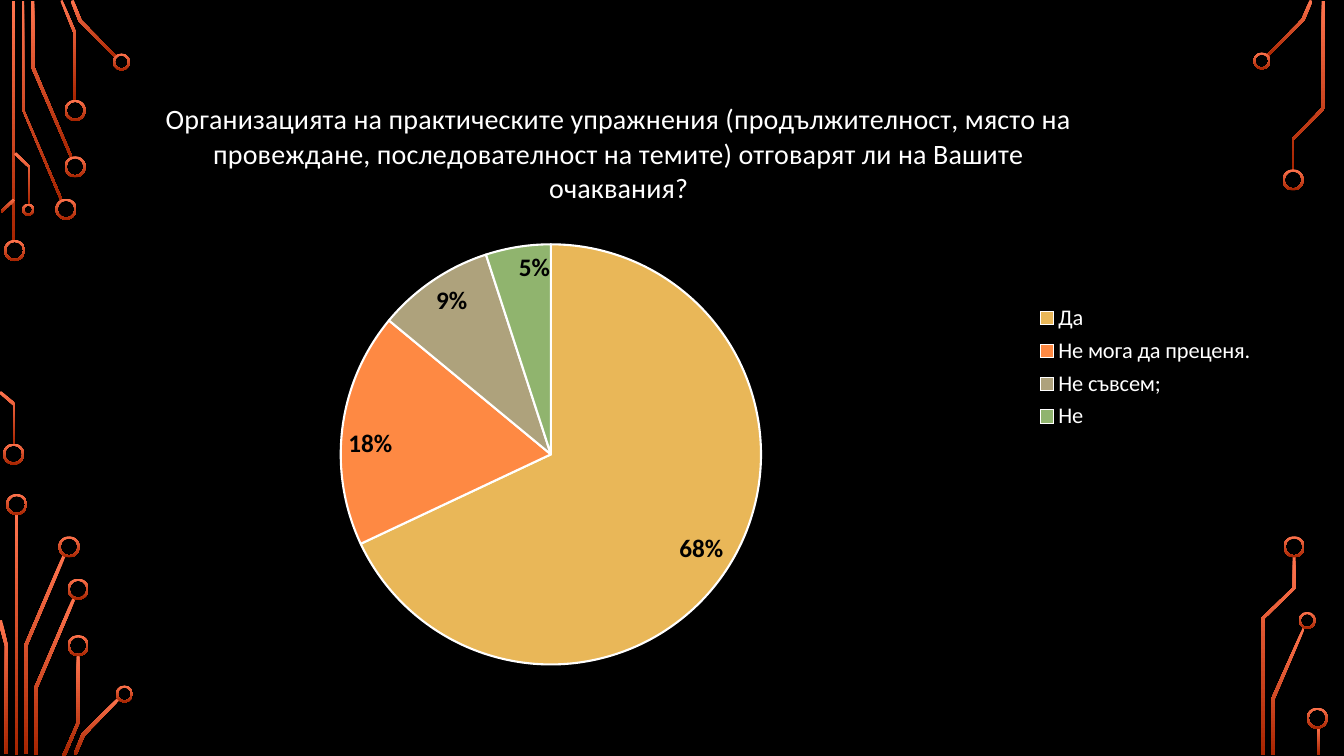
from pptx import Presentation
from pptx.chart.data import CategoryChartData
from pptx.dml.color import RGBColor
from pptx.enum.chart import XL_CHART_TYPE, XL_LABEL_POSITION, XL_LEGEND_POSITION
from pptx.enum.shapes import MSO_SHAPE
from pptx.oxml import parse_xml
from pptx.oxml.ns import nsdecls, qn
from pptx.util import Inches, Pt

BLACK = RGBColor(0x00, 0x00, 0x00)
WHITE = RGBColor(0xFF, 0xFF, 0xFF)
TRACE_TOP = RGBColor(0xFF, 0x74, 0x4E)
TRACE_BOTTOM = RGBColor(0xA6, 0x24, 0x00)
FONT = "Calibri"
RING_WIDTH = 0.02

ANSWERS = [
    ("Да", 68, RGBColor(0xE9, 0xB7, 0x58)),
    ("Не мога да преценя.", 18, RGBColor(0xFE, 0x89, 0x43)),
    ("Не съвсем;", 9, RGBColor(0xAE, 0xA2, 0x7C)),
    ("Не", 5, RGBColor(0x90, 0xB4, 0x6E)),
]
QUESTION = (
    "Организацията на практическите упражнения (продължителност, място на "
    "провеждане, последователност на темите) отговарят ли на Вашите очаквания?"
)

# Straight traces: left, top, height
BARS = [(0.12, 0.01, 2.39), (0.15, 5.1, 2.39), (13.06, 7.21, 0.28)]

# Bent traces: outline corners
TRACES = [
    # top left
    [(0.6, 1.99), (0.22, 1.09), (0.22, 0.01), (0.24, 0.01), (0.24, 1.09), (0.62, 1.98)],
    [(0.7, 1.57), (0.31, 0.67), (0.31, 0.01), (0.34, 0.01), (0.34, 0.66), (0.72, 1.56)],
    [(0.76, 1), (0.73, 1), (0.73, 0.33), (0.6, 0.01), (0.62, 0), (0.76, 0.33)],
    [(1.15, 0.58), (0.78, 0.21), (0.7, 0.01), (0.73, 0), (0.81, 0.2), (1.16, 0.56)],
    [(0.02, 2.11), (0.01, 2.09), (0.13, 1.97), (0.15, 1.99)],
    [(0.3, 2.03), (0.28, 2.03), (0.28, 1.66), (0.14, 1.53), (0.16, 1.51), (0.3, 1.65)],
    # bottom left
    [(0.15, 4.41), (0.13, 4.41), (0.13, 4.02), (-0.01, 3.9), (0.01, 3.88), (0.15, 4)],
    [(0.27, 7.48), (0.24, 7.48), (0.24, 6.4), (0.62, 5.51), (0.65, 5.52), (0.27, 6.41)],
    [(0.08, 7.48), (0.05, 7.48), (0.05, 6.41), (-0.02, 6.16), (0.02, 6.15), (0.08, 6.41)],
    [(0.37, 7.49), (0.34, 7.49), (0.34, 6.82), (0.72, 5.93), (0.75, 5.94), (0.37, 6.83)],
    [(0.65, 7.5), (0.62, 7.49), (0.76, 7.17), (0.76, 6.5), (0.79, 6.5), (0.79, 7.17)],
    [(0.76, 7.49), (0.73, 7.48), (0.81, 7.28), (1.17, 6.92), (1.19, 6.94), (0.84, 7.3)],
    # top right
    [(12.58, 0.56), (12.56, 0.55), (12.91, 0.19), (12.99, 0), (13.02, 0.01), (12.94, 0.2)],
    [(12.83, 1.69), (12.81, 1.69), (12.81, 1.38), (13.11, 1.07), (13.11, 0.01),
     (13.14, 0.01), (13.14, 1.08), (12.83, 1.39)],
    # bottom right
    [(12.64, 7.49), (12.61, 7.49), (12.61, 6.93), (12.92, 6.23), (12.94, 6.24), (12.64, 6.94)],
    [(12.54, 7.49), (12.51, 7.49), (12.51, 6.13), (12.82, 5.83), (12.82, 5.52),
     (12.85, 5.52), (12.85, 5.84), (12.54, 6.14)],
]

# Trace ends by diameter: left, top
RINGS = {
    0.21: [(0.04, 2.38), (0.03, 4.4), (0.55, 1.97), (0.64, 1.55), (0.64, 0.99),
           (0.06, 4.9), (0.58, 5.32), (0.67, 5.74), (0.67, 6.3),
           (12.72, 1.68), (12.73, 5.32), (12.96, 7.02)],
    0.17: [(1.12, 0.53), (1.15, 6.8), (12.43, 0.52), (12.88, 6.07)],
    0.12: [(0.22, 2.02)],
}


def style_trace(sp):
    sp.shadow.inherit = False
    sp.line.fill.background()
    sp.fill.gradient()
    sp.fill.gradient_angle = 270
    for stop, color in zip(sp.fill.gradient_stops, (TRACE_TOP, TRACE_BOTTOM)):
        stop.color.rgb = color


def place_in_chart(parent, index, **fractions):
    """Give a chart part a manual layout in fractions of the chart; index is its place in the XML."""
    old = parent.find(qn("c:layout"))
    if old is not None:
        parent.remove(old)
    target = '<c:layoutTarget val="inner"/>' if parent.tag == qn("c:plotArea") else ""
    modes = '<c:xMode val="edge"/><c:yMode val="edge"/>'
    values = "".join(f'<c:{key} val="{val}"/>' for key, val in fractions.items())
    parent.insert(index, parse_xml(
        f'<c:layout {nsdecls("c")}><c:manualLayout>{target}{modes}{values}'
        "</c:manualLayout></c:layout>"))


prs = Presentation()
prs.slide_width = Inches(13.33)
prs.slide_height = Inches(7.5)
s = prs.slides.add_slide(prs.slide_layouts[6])
s.background.fill.solid()
s.background.fill.fore_color.rgb = BLACK

# Circuit decoration
for left, top, height in BARS:
    style_trace(s.shapes.add_shape(
        MSO_SHAPE.RECTANGLE, Inches(left), Inches(top), Inches(0.03), Inches(height)))

for corners in TRACES:
    points = [(Inches(x), Inches(y)) for x, y in corners]
    builder = s.shapes.build_freeform(*points[0])
    builder.add_line_segments(points[1:], close=True)
    style_trace(builder.convert_to_shape())

for size, places in RINGS.items():
    for left, top in places:
        ring = s.shapes.add_shape(
            MSO_SHAPE.DONUT, Inches(left), Inches(top), Inches(size), Inches(size))
        ring.adjustments[0] = RING_WIDTH / size
        style_trace(ring)

# Pie chart
data = CategoryChartData()
data.categories = [name for name, value, color in ANSWERS]
data.add_series("Series 1", [value for name, value, color in ANSWERS])
chart = s.shapes.add_chart(
    XL_CHART_TYPE.PIE, Inches(0.64), Inches(0.56), Inches(11.91), Inches(6.17), data).chart
chart.font.name = FONT
chart.font.size = Pt(10)
chart.font.color.rgb = WHITE

chart.has_title = True
p = chart.chart_title.text_frame.paragraphs[0]
r = p.add_run()
r.text = QUESTION
r.font.name = FONT
r.font.size = Pt(20)
r.font.bold = False
r.font.color.rgb = WHITE

chart.has_legend = True
legend = chart.legend
legend.position = XL_LEGEND_POSITION.RIGHT
legend.include_in_layout = False
legend.font.name = FONT
legend.font.size = Pt(16)
legend.font.color.rgb = WHITE

plot = chart.plots[0]
plot.vary_by_categories = True
for i, (name, value, color) in enumerate(ANSWERS):
    point = plot.series[0].points[i]
    point.format.fill.solid()
    point.format.fill.fore_color.rgb = color
    point.format.line.color.rgb = WHITE
    point.format.line.width = Pt(1.5)

plot.has_data_labels = True
labels = plot.data_labels
labels.show_percentage = True
labels.show_value = False
labels.number_format = "0%"
labels.number_format_is_linked = False
labels.position = XL_LABEL_POSITION.INSIDE_END
labels.font.name = FONT
labels.font.size = Pt(18)
labels.font.bold = True
labels.font.color.rgb = BLACK

root = chart.element
place_in_chart(root.find(".//" + qn("c:title")), 1, x=0.08, y=0.06)
place_in_chart(root.find(".//" + qn("c:plotArea")), 0, x=0.23, y=0.3, w=0.35, h=0.68)
place_in_chart(root.find(".//" + qn("c:legend")), 1, x=0.81, y=0.39, w=0.18, h=0.22)

prs.save("out.pptx")
